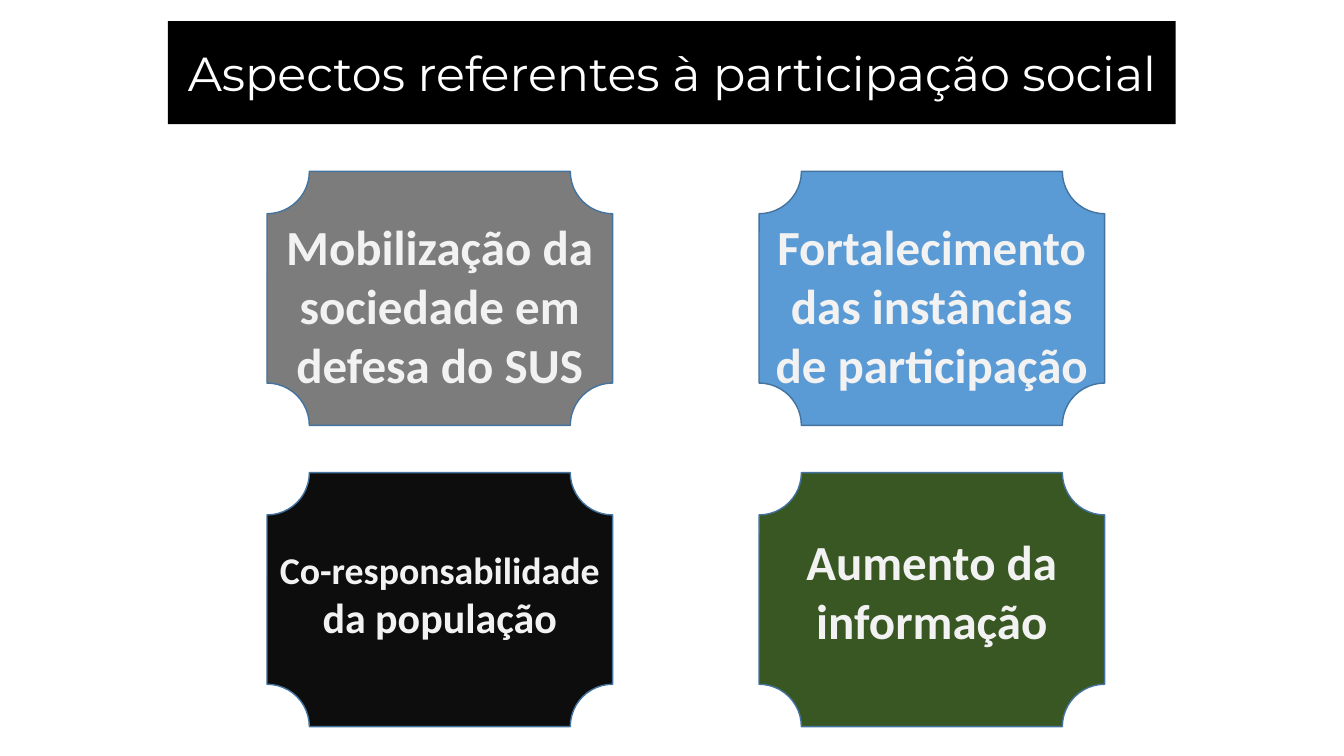
from pptx import Presentation
from pptx.dml.color import RGBColor
from pptx.enum.shapes import MSO_SHAPE
from pptx.enum.text import MSO_ANCHOR, MSO_AUTO_SIZE, PP_ALIGN
from pptx.util import Cm, Pt

TITLE = "Aspectos referentes à participação social"
PLAQUES = [
    {"column": 1, "row": 0, "fill": "5B9BD5", "label_top": 5.33, "label_height": 4.75,
     "spans": [("Fortalecimento das instâncias de participação", 35)]},
    {"column": 0, "row": 0, "fill": "7C7C7C", "label_top": 5.33, "label_height": 4.75,
     "spans": [("Mobilização da sociedade em defesa do SUS", 35)]},
    {"column": 0, "row": 1, "fill": "0D0D0D", "label_top": 13.64, "label_height": 2.69,
     "spans": [("Co-responsabilidade ", 27), ("da população", 30)]},
    {"column": 1, "row": 1, "fill": "385723", "label_top": 13.28, "label_height": 3.25,
     "spans": [("Aumento da informação", 35)]},
]
GRID_LEFT, GRID_TOP = 6.73, 4.32
COLUMN_STEP, ROW_STEP = 12.4, 7.59
PLAQUE_WIDTH, PLAQUE_HEIGHT = 8.71, 6.4
TITLE_PLACE = {"left": Cm(4.23), "top": Cm(0.53), "width": Cm(25.4), "height": Cm(2.6)}
TITLE_FRAME = {"word_wrap": True, "auto_size": MSO_AUTO_SIZE.NONE,
               "vertical_anchor": MSO_ANCHOR.MIDDLE}
LABEL_FRAME = {"word_wrap": True, "auto_size": MSO_AUTO_SIZE.SHAPE_TO_FIT_TEXT,
               "vertical_anchor": MSO_ANCHOR.TOP}
TITLE_FONT = {"name": "Montserrat", "size": Pt(34.1), "bold": False}
LABEL_FONT = {"name": "Calibri", "bold": True}


def apply(target, values):
    for name, value in values.items():
        setattr(target, name, value)


def paint(color_format, color):
    color_format.rgb = RGBColor.from_string(color)


def fill_shape(shape, color):
    shape.fill.solid()
    paint(shape.fill.fore_color, color)


def add_span(para, text, font, color):
    span = para.add_run()
    span.text = text
    apply(span.font, font)
    paint(span.font.color, color)


def add_title(page):
    title = page.shapes.title
    apply(title, TITLE_PLACE)
    fill_shape(title, "000000")
    apply(title.text_frame, TITLE_FRAME)
    para = title.text_frame.paragraphs[0]
    apply(para, {"alignment": PP_ALIGN.CENTER, "line_spacing": 1.0})
    add_span(para, TITLE, TITLE_FONT, "FFFFFF")


def add_plaque(page, item):
    left = Cm(GRID_LEFT + item["column"] * COLUMN_STEP)
    top = Cm(GRID_TOP + item["row"] * ROW_STEP)
    width = Cm(PLAQUE_WIDTH)
    plaque = page.shapes.add_shape(MSO_SHAPE.PLAQUE, left, top, width, Cm(PLAQUE_HEIGHT))
    plaque.shadow.inherit = False
    fill_shape(plaque, item["fill"])
    paint(plaque.line.color, "43739E")
    plaque.line.width = Pt(1)

    box = page.shapes.add_textbox(left, Cm(item["label_top"]), width, Cm(item["label_height"]))
    apply(box.text_frame, LABEL_FRAME)
    para = box.text_frame.paragraphs[0]
    para.alignment = PP_ALIGN.CENTER
    for text, size in item["spans"]:
        add_span(para, text, {**LABEL_FONT, "size": Pt(size)}, "F2F2F2")


def main():
    deck = Presentation()
    apply(deck, {"slide_width": Cm(33.87), "slide_height": Cm(19.05)})
    page = deck.slides.add_slide(deck.slide_layouts[5])
    add_title(page)
    for item in PLAQUES:
        add_plaque(page, item)
    deck.save("out.pptx")


if __name__ == "__main__":
    main()
